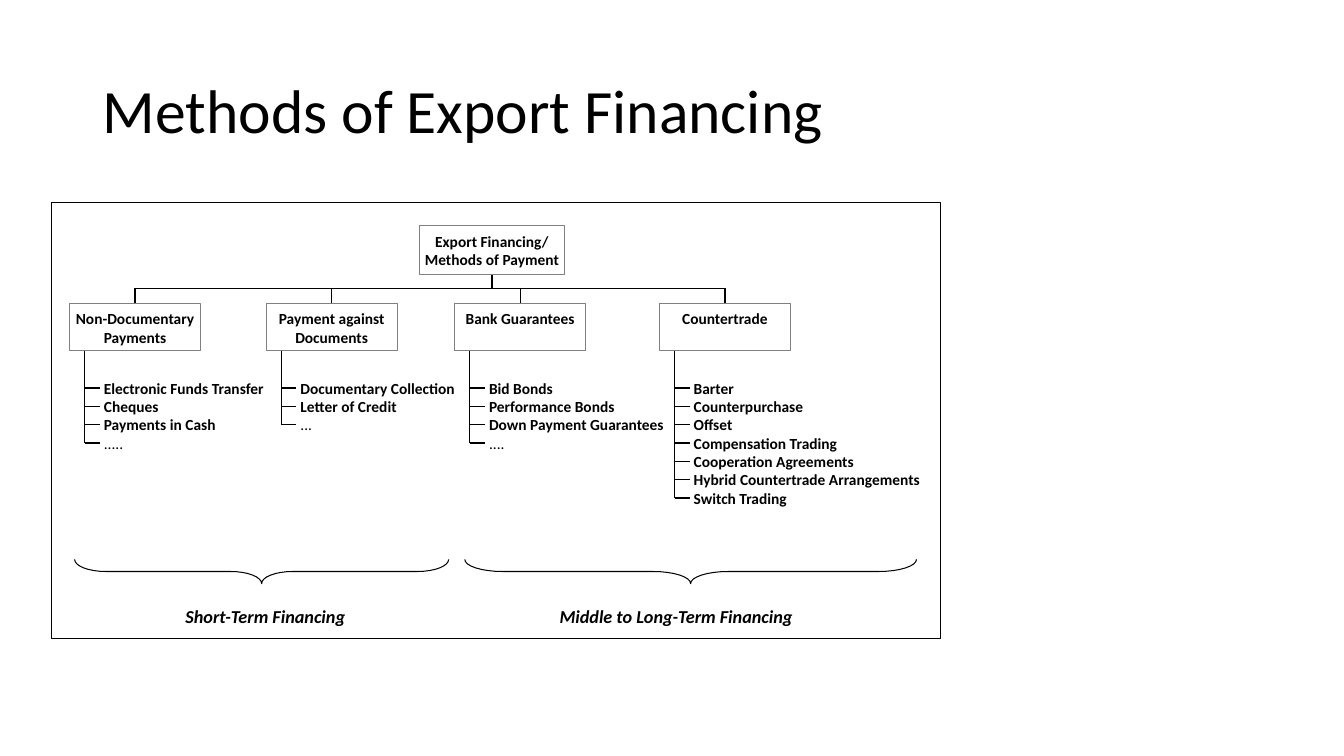
from dataclasses import dataclass
from math import cos, pi, sin

from pptx import Presentation
from pptx.dml.color import RGBColor
from pptx.enum.shapes import MSO_CONNECTOR as Connector, MSO_SHAPE as Shape
from pptx.enum.text import MSO_ANCHOR as Anchor, PP_ALIGN as Align
from pptx.oxml.ns import qn
from pptx.util import Inches, Pt


@dataclass(frozen=True)
class Theme:
    font: str = "Calibri"
    black: RGBColor = RGBColor(0, 0, 0)
    gray: RGBColor = RGBColor(0x80, 0x80, 0x80)
    white: RGBColor = RGBColor(255, 255, 255)
    title_size: float = 44
    label_size: float = 11
    caption_size: float = 13
    item_spacing: float = 13.1
    tree_line: float = 0.88
    thin_line: float = 0.75


THEME = Theme()
ROOT = ["Export Financing/", "Methods of Payment"]
BRANCHES = [
    (0.69, 1.75, ["Non-Documentary", "Payments"],
     ["Electronic Funds Transfer", "Cheques", "Payments in Cash", "....."]),
    (2.64, 1.65, ["Payment against", "Documents"],
     ["Documentary Collection", "Letter of Credit", "..."]),
    (4.51, 1.82, ["Bank Guarantees"],
     ["Bid Bonds", "Performance Bonds", "Down Payment Guarantees", "...."]),
    (6.54, 2.42, ["Countertrade"],
     ["Barter", "Counterpurchase", "Offset", "Compensation Trading",
      "Cooperation Agreements", "Hybrid Countertrade Arrangements", "Switch Trading"]),
]
TERMS = [
    (0.74, 3.71, 1.84, "Short-Term Financing"),
    (4.61, 4.48, 5.55, "Middle to Long-Term Financing"),
]
ROOT_LEFT, ROOT_TOP, ROOT_WIDTH, ROOT_HEIGHT = 4.16, 2.24, 1.44, 0.48
NODE_TOP, NODE_WIDTH, NODE_HEIGHT = 3.01, 1.3, 0.47
BUS_TOP = 2.86
STEM_OFFSET, TICK_LENGTH, ITEM_OFFSET = 0.15, 0.15, 0.34
ITEM_TOP, TICK_TOP = 3.76, 3.85
ITEM_PITCH = THEME.item_spacing / 72
BRACE_TOP, BRACE_DEPTH, CAPTION_TOP = 5.55, 0.24, 6.01


def style_font(font, size, bold=False, italic=False):
    font.name = THEME.font
    font.size = Pt(size)
    font.bold = bold
    font.italic = italic
    font.color.rgb = THEME.black


def write_lines(text_frame, lines, size, align, top=0.0, italic=False, spacing=None):
    text_frame.margin_left = text_frame.margin_right = text_frame.margin_bottom = 0
    text_frame.margin_top = Inches(top)
    text_frame.vertical_anchor = Anchor.TOP
    text_frame.word_wrap = False
    text_frame.text = "\n".join(lines)
    for paragraph in text_frame.paragraphs:
        paragraph.alignment = align
        if spacing:
            paragraph.line_spacing = Pt(spacing)
        for run in paragraph.runs:
            style_font(run.font, size, bold=bool(run.text.strip(".")), italic=italic)


def add_text(slide, left, top, width, height, lines, size, **options):
    text_box = slide.shapes.add_textbox(
        Inches(left), Inches(top), Inches(width), Inches(height))
    write_lines(text_box.text_frame, lines, size, Align.LEFT, **options)


def add_box(slide, left, top, width, height, color, weight):
    box = slide.shapes.add_shape(
        Shape.RECTANGLE, Inches(left), Inches(top), Inches(width), Inches(height))
    box.shadow.inherit = False
    box.fill.solid()
    box.fill.fore_color.rgb = THEME.white
    box.line.color.rgb = color
    box.line.width = Pt(weight)
    return box


def add_node(slide, left, top, width, height, lines):
    node = add_box(slide, left, top, width, height, THEME.gray, THEME.tree_line)
    write_lines(node.text_frame, lines, THEME.label_size, Align.CENTER, top=0.06)


def add_line(slide, x1, y1, x2, y2):
    line = slide.shapes.add_connector(
        Connector.STRAIGHT, Inches(x1), Inches(y1), Inches(x2), Inches(y2))
    line.line.color.rgb = THEME.black
    line.line.width = Pt(THEME.tree_line)
    properties = line._element.spPr
    properties.append(properties.makeelement(qn("a:effectLst"), {}))


def add_brace(slide, left, width):
    radius, rise, middle = width / 12, BRACE_DEPTH / 2, width / 2
    angles = [step * pi / 16 for step in range(9)]
    half = [(radius * (1 - cos(a)), rise * sin(a)) for a in angles]
    half += [(middle - radius + radius * sin(a), rise * (2 - cos(a))) for a in angles]
    outline = half + [(width - x, y) for x, y in reversed(half[:-1])]
    points = [(Inches(left + x), Inches(BRACE_TOP + y)) for x, y in outline]
    builder = slide.shapes.build_freeform(*points[0])
    builder.add_line_segments(points[1:], close=False)
    brace = builder.convert_to_shape()
    brace.shadow.inherit = False
    brace.fill.background()
    brace.line.color.rgb = THEME.black
    brace.line.width = Pt(THEME.thin_line)


def add_title(slide, text):
    title = slide.shapes.title
    title.left, title.top = Inches(0.92), Inches(0.4)
    title.width, title.height = Inches(11.5), Inches(1.45)
    title.text_frame.text = text
    title.text_frame.vertical_anchor = Anchor.MIDDLE
    paragraph = title.text_frame.paragraphs[0]
    paragraph.alignment = Align.LEFT
    paragraph.line_spacing = 0.9
    style_font(paragraph.runs[0].font, THEME.title_size)


def add_branch(slide, left, list_width, heading, items):
    center, stem = left + NODE_WIDTH / 2, left + STEM_OFFSET
    ticks = [TICK_TOP + index * ITEM_PITCH for index in range(len(items))]
    add_line(slide, center, BUS_TOP, center, NODE_TOP)
    add_line(slide, stem, NODE_TOP + NODE_HEIGHT, stem, ticks[-1])
    for tick in ticks:
        add_line(slide, stem, tick, stem + TICK_LENGTH, tick)
    add_node(slide, left, NODE_TOP, NODE_WIDTH, NODE_HEIGHT, heading)
    add_text(slide, left + ITEM_OFFSET, ITEM_TOP, list_width, len(items) * ITEM_PITCH,
             items, THEME.label_size, spacing=THEME.item_spacing)


def main():
    presentation = Presentation()
    presentation.slide_width, presentation.slide_height = Inches(13.33), Inches(7.5)
    slide = presentation.slides.add_slide(presentation.slide_layouts[5])
    add_title(slide, "Methods of Export Financing")
    add_box(slide, 0.51, 2.01, 8.82, 4.33, THEME.black, THEME.thin_line)

    root_center = ROOT_LEFT + ROOT_WIDTH / 2
    add_line(slide, root_center, ROOT_TOP + ROOT_HEIGHT, root_center, BUS_TOP)
    bus_left, bus_right = (BRANCHES[end][0] + NODE_WIDTH / 2 for end in (0, -1))
    add_line(slide, bus_left, BUS_TOP, bus_right, BUS_TOP)
    add_node(slide, ROOT_LEFT, ROOT_TOP, ROOT_WIDTH, ROOT_HEIGHT, ROOT)
    for left, list_width, heading, items in BRANCHES:
        add_branch(slide, left, list_width, heading, items)

    for left, width, caption_left, caption in TERMS:
        add_brace(slide, left, width)
        add_text(slide, caption_left, CAPTION_TOP, 2.4, 0.24, [caption],
                 THEME.caption_size, italic=True)
    presentation.save("out.pptx")


if __name__ == "__main__":
    main()
